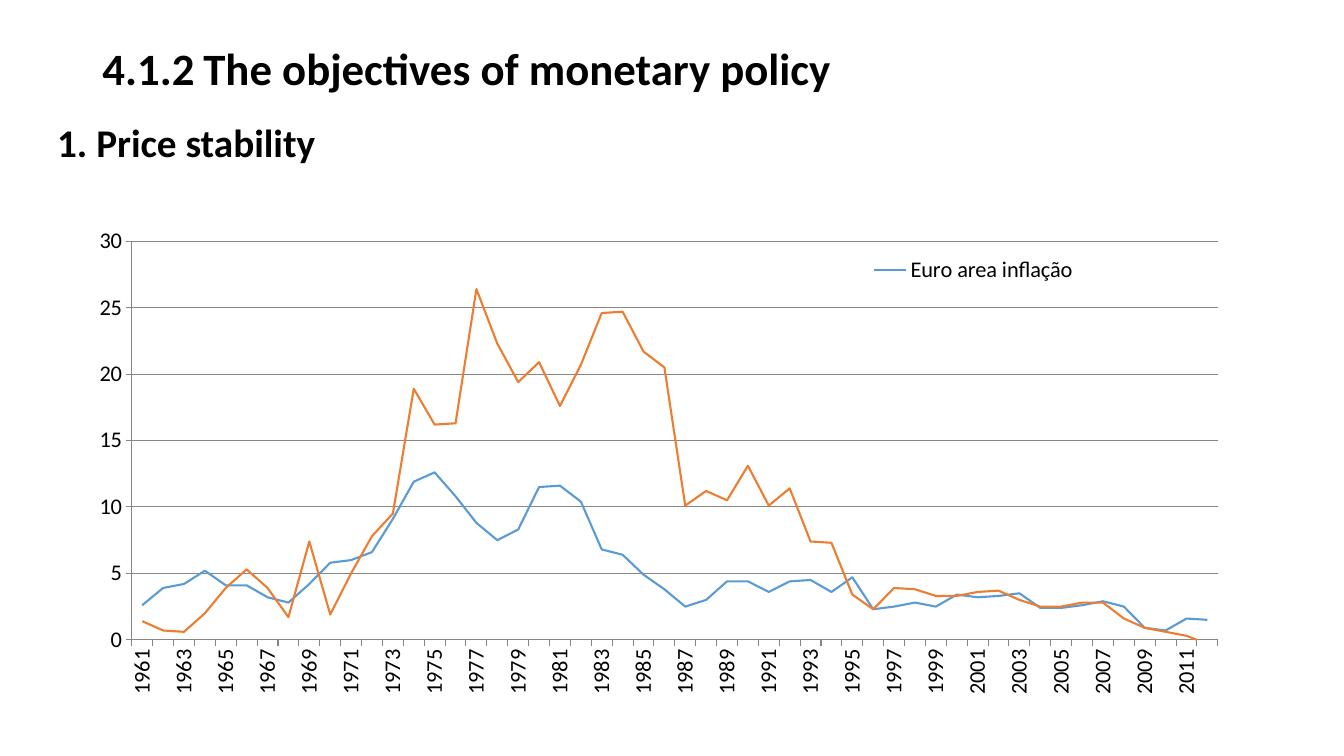
from lxml.etree import SubElement
from pptx import Presentation
from pptx.chart.data import CategoryChartData
from pptx.dml.color import RGBColor
from pptx.enum.chart import XL_CHART_TYPE as Kind, XL_LEGEND_POSITION as Side, XL_TICK_MARK as Tick
from pptx.enum.text import MSO_ANCHOR as Anchor, MSO_AUTO_SIZE as Fit, PP_ALIGN as Align
from pptx.oxml.ns import qn
from pptx.util import Pt

PX = 9525


def style(font, size, bold):
    for key, val in {"name": "Calibri", "size": Pt(size), "bold": bold}.items():
        setattr(font, key, val)
    font.color.rgb = RGBColor.from_string("000000")


def place(node, spot):
    old = node.find(qn("c:layout"))
    if old is not None:
        node.remove(old)
    box = SubElement(node, qn("c:layout"))
    man = SubElement(box, qn("c:manualLayout"))
    for tag, val in spot.items():
        SubElement(man, qn("c:" + tag)).set("val", str(val))
    return box


deck = Presentation()
deck.slide_width, deck.slide_height = 1280 * PX, 720 * PX
slide = deck.slides.add_slide(deck.slide_layouts[5])

title = slide.shapes.title
for key, val in {"left": 88, "top": 26, "width": 1104, "height": 83}.items():
    setattr(title, key, val * PX)
frame = title.text_frame
frame.text = "4.1.2\tThe objectives of monetary policy"
frame.vertical_anchor = Anchor.MIDDLE
frame.auto_size = Fit.NONE
para = frame.paragraphs[0]
para.alignment = Align.LEFT
para.line_spacing = 0.9
style(para.runs[0].font, 32, True)

head = slide.shapes.add_textbox(45 * PX, 108 * PX, 608 * PX, 55 * PX).text_frame
head.word_wrap = True
head.auto_size = Fit.SHAPE_TO_FIT_TEXT
head.text = "1. Price stability"
para = head.paragraphs[0]
para.alignment = Align.JUSTIFY
para.space_after = Pt(6)
style(para.runs[0].font, 28, True)

rates = [
    ("Euro area inflação", "5B9BD5", [
        2.6, 3.9, 4.2, 5.2, 4.1, 4.1, 3.2, 2.8, 4.2, 5.8, 6, 6.6, 9.1,
        11.9, 12.6, 10.8, 8.8, 7.5, 8.3, 11.5, 11.6, 10.4, 6.8, 6.4, 4.9, 3.8,
        2.5, 3, 4.4, 4.4, 3.6, 4.4, 4.5, 3.6, 4.7, 2.3, 2.5, 2.8, 2.5,
        3.4, 3.2, 3.3, 3.5, 2.4, 2.4, 2.6, 2.9, 2.5, 0.9, 0.7, 1.6, 1.5]),
    ("", "ED7D31", [
        1.4, 0.7, 0.6, 2, 3.9, 5.3, 3.9, 1.7, 7.4, 1.9, 5, 7.8, 9.5,
        18.9, 16.2, 16.3, 26.4, 22.3, 19.4, 20.9, 17.6, 20.7, 24.6, 24.7, 21.7, 20.5,
        10.1, 11.2, 10.5, 13.1, 10.1, 11.4, 7.4, 7.3, 3.4, 2.3, 3.9, 3.8, 3.3,
        3.3, 3.6, 3.7, 3, 2.5, 2.5, 2.8, 2.8, 1.6, 0.9, 0.6, 0.3, -0.3]),
]
data = CategoryChartData()
data.categories = [str(year) for year in range(1961, 2013)]
for name, hue, vals in rates:
    data.add_series(name, vals)
chart = slide.shapes.add_chart(Kind.LINE, 88 * PX, 178 * PX, 1104 * PX, 513 * PX, data).chart
style(chart.font, 16, False)
chart.has_title = False

plot = chart.plots[0]
plot.vary_by_categories = False
for line, (name, hue, vals) in zip(plot.series, rates):
    line.smooth = False
    line.format.line.width = Pt(1.5)
    line.format.line.color.rgb = RGBColor.from_string(hue)

years, scale = chart.category_axis, chart.value_axis
scale.has_major_gridlines = True
for key, val in {"minimum_scale": 0, "maximum_scale": 30, "major_unit": 5}.items():
    setattr(scale, key, val)
for axis in (years, scale):
    axis.major_tick_mark = Tick.OUTSIDE
    axis.minor_tick_mark = Tick.NONE
    axis.tick_labels.number_format = "General"
    axis.tick_labels.number_format_is_linked = False
for part in (years, scale, scale.major_gridlines):
    part.format.line.width = Pt(0.75)
    part.format.line.color.rgb = RGBColor.from_string("868686")

style(years.tick_labels.font, 16, False)
turn = years._element.find(qn("c:txPr")).find(qn("a:bodyPr"))
turn.set("rot", "-5400000")
turn.set("vert", "horz")
last = years._element.find(qn("c:noMultiLvlLbl"))
for tag, step in (("tickLblSkip", 2), ("tickMarkSkip", 1)):
    skip = SubElement(years._element, qn("c:" + tag))
    skip.set("val", str(step))
    last.addprevious(skip)

area = chart._chartSpace.chart.plotArea
area.insert(0, place(area, {
    "layoutTarget": "inner", "xMode": "edge", "yMode": "edge",
    "x": 0.034, "y": 0.101, "w": 0.937, "h": 0.74}))

chart.has_legend = True
key = chart.legend
key.position = Side.RIGHT
key.include_in_layout = False
node = key._element
entry = SubElement(node, qn("c:legendEntry"))
SubElement(entry, qn("c:idx")).set("val", "1")
SubElement(entry, qn("c:delete")).set("val", "1")
node.insert(1, entry)
node.insert(2, place(node, {
    "xMode": "edge", "yMode": "edge", "x": 0.66, "y": 0.12, "w": 0.2, "h": 0.07}))

deck.save("out.pptx")
